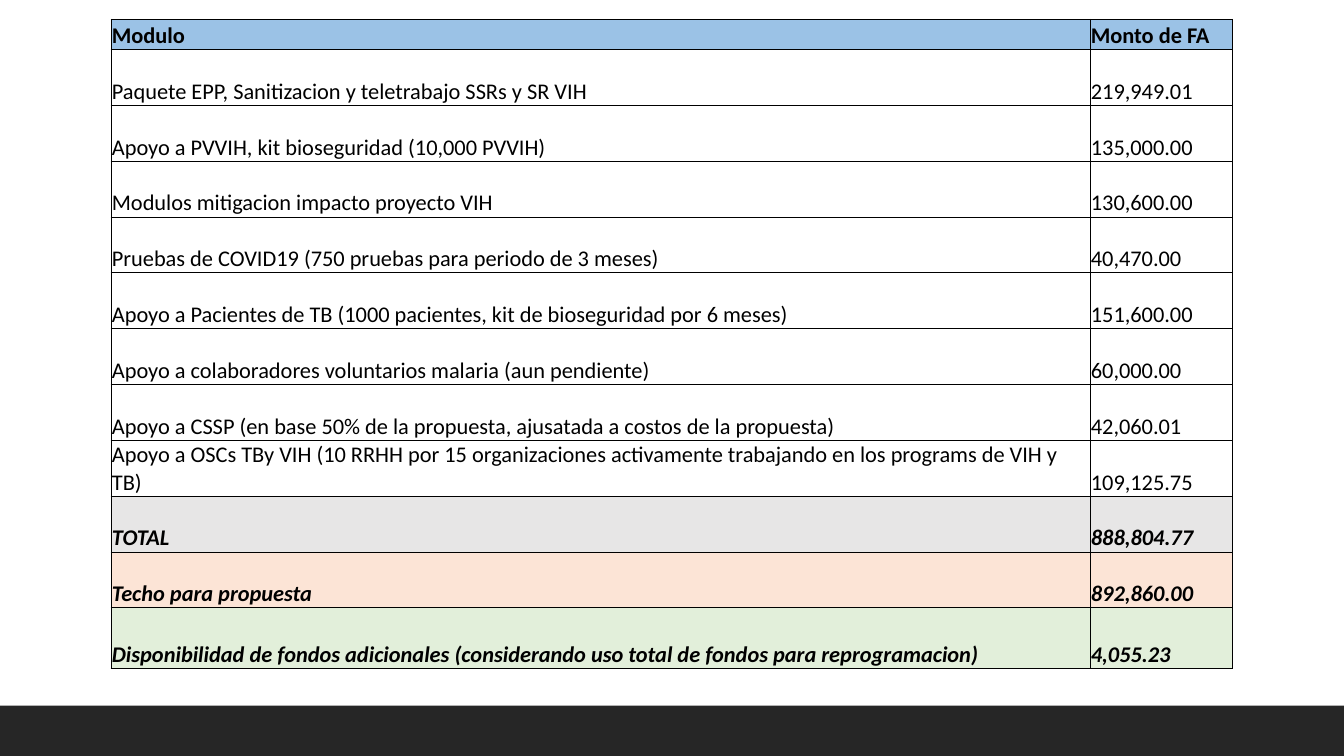
from dataclasses import dataclass

from lxml import etree
from pptx import Presentation
from pptx.dml.color import RGBColor
from pptx.enum.shapes import MSO_SHAPE
from pptx.enum.text import MSO_ANCHOR
from pptx.oxml.ns import qn
from pptx.util import Inches, Pt

RECTANGLE = MSO_SHAPE.RECTANGLE
BOTTOM = MSO_ANCHOR.BOTTOM
BLANK_LAYOUT = 6


@dataclass(frozen=True)
class Theme:
    font: str = "Calibri"
    size: int = 16
    border_width: float = 0.5
    ink: str = "000000"
    footer: str = "262626"
    header: str = "9BC2E6"
    total: str = "E7E6E6"
    ceiling: str = "FCE4D6"
    available: str = "E2EFDA"


THEME = Theme()

# Budget content
HEADER = ("Modulo", "Monto de FA")
MODULES = [
    ("Paquete EPP, Sanitizacion y teletrabajo SSRs y SR VIH", "219,949.01"),
    ("Apoyo a PVVIH, kit bioseguridad (10,000 PVVIH)", "135,000.00"),
    ("Modulos mitigacion impacto proyecto VIH", "130,600.00"),
    ("Pruebas de COVID19 (750 pruebas para periodo de 3 meses)", "40,470.00"),
    ("Apoyo a Pacientes de TB (1000 pacientes, kit de bioseguridad por 6 meses)", "151,600.00"),
    ("Apoyo a colaboradores voluntarios malaria (aun pendiente)", "60,000.00"),
    ("Apoyo a CSSP (en base 50% de la propuesta, ajusatada a costos de la propuesta)", "42,060.01"),
    ("Apoyo a OSCs TBy VIH (10 RRHH por 15 organizaciones activamente trabajando "
     "en los programs de VIH y TB)", "109,125.75"),
]
SUMMARY = [
    ("TOTAL", "888,804.77", THEME.total),
    ("Techo para propuesta", "892,860.00", THEME.ceiling),
    ("Disponibilidad de fondos adicionales (considerando uso total de fondos "
     "para reprogramacion)", "4,055.23", THEME.available),
]

# Table geometry in inches: the rows between the first and the last are equal
COLUMN_WIDTHS = (9.71, 1.41)
HEADER_HEIGHT, MIDDLE_HEIGHT, LAST_HEIGHT = 0.3, 5.54, 0.6


def add_footer_band(page):
    band = page.shapes.add_shape(RECTANGLE, 0, Inches(7), Inches(13.33), Inches(0.5))
    band.shadow.inherit = False
    band.fill.solid()
    band.fill.fore_color.rgb = RGBColor.from_string(THEME.footer)
    band.line.fill.background()


def add_borders(cell):
    properties = cell._tc.get_or_add_tcPr()
    for position, side in enumerate(("a:lnL", "a:lnR", "a:lnT", "a:lnB")):
        line = etree.Element(qn(side), w=str(Pt(THEME.border_width)))
        fill = etree.SubElement(line, qn("a:solidFill"))
        etree.SubElement(fill, qn("a:srgbClr"), val=THEME.ink)
        properties.insert(position, line)


def fill_cell(cell, text, color=None, bold=False, italic=False):
    cell.margin_left = cell.margin_right = cell.margin_top = Inches(0.01)
    cell.margin_bottom = 0
    cell.vertical_anchor = BOTTOM
    if color:
        cell.fill.solid()
        cell.fill.fore_color.rgb = RGBColor.from_string(color)
    else:
        cell.fill.background()
    add_borders(cell)

    cell.text_frame.text = text
    font = cell.text_frame.paragraphs[0].runs[0].font
    font.name, font.size = THEME.font, Pt(THEME.size)
    font.bold, font.italic = bold, italic
    font.color.rgb = RGBColor.from_string(THEME.ink)


def fill_row(table, index, texts, **style):
    for column, text in enumerate(texts):
        fill_cell(table.cell(index, column), text, **style)


def add_budget_table(page):
    row_count = 1 + len(MODULES) + len(SUMMARY)
    height = HEADER_HEIGHT + MIDDLE_HEIGHT + LAST_HEIGHT
    table = page.shapes.add_table(
        row_count, len(HEADER), Inches(1.1), Inches(0.19),
        Inches(sum(COLUMN_WIDTHS)), Inches(height)).table
    table.horz_banding = False

    for column, width in zip(table.columns, COLUMN_WIDTHS):
        column.width = Inches(width)
    middle_count = row_count - 2
    heights = [HEADER_HEIGHT, *[MIDDLE_HEIGHT / middle_count] * middle_count, LAST_HEIGHT]
    for row, row_height in zip(table.rows, heights):
        row.height = Inches(row_height)

    fill_row(table, 0, HEADER, color=THEME.header, bold=True)
    for index, module in enumerate(MODULES, start=1):
        fill_row(table, index, module)
    for index, (label, amount, color) in enumerate(SUMMARY, start=1 + len(MODULES)):
        fill_row(table, index, (label, amount), color=color, bold=True, italic=True)


def main():
    deck = Presentation()
    deck.slide_width, deck.slide_height = Inches(13.33), Inches(7.5)
    page = deck.slides.add_slide(deck.slide_layouts[BLANK_LAYOUT])
    add_footer_band(page)
    add_budget_table(page)
    deck.save("out.pptx")


if __name__ == "__main__":
    main()
